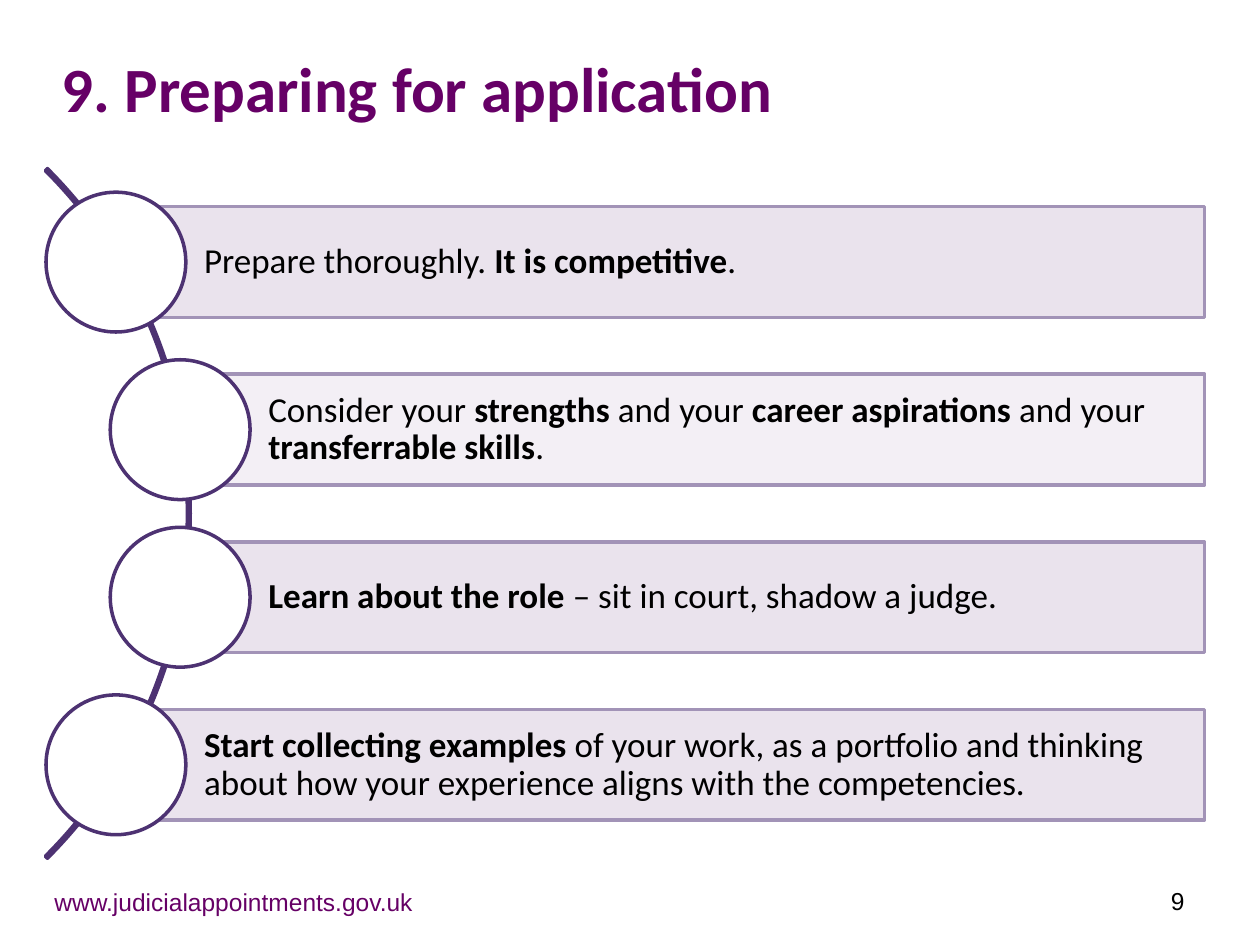
from dataclasses import dataclass

import pptx
import pptx.dml.color
import pptx.enum.shapes
import pptx.enum.text
import pptx.util

SHAPE = pptx.enum.shapes.MSO_SHAPE
ALIGN = pptx.enum.text.PP_ALIGN
MIDDLE = pptx.enum.text.MSO_ANCHOR.MIDDLE
Inches = pptx.util.Inches

COLORS = {
    "plum": "660066", "black": "000000", "white": "FFFFFF",
    "outline": "4D3272", "bar_line": "A293B7",
    "bar": "EAE3ED", "bar_pale": "F3EFF5",
}

# Step grid: four equal rows, two indents for the bars
ROW_TOP, ROW_PITCH, BAR_H = 1.64, 1.33, 0.88
COLUMNS = (0.92, 1.43)
BAR_RIGHT = 9.56
CIRCLE = 1.11
ARC = 7.74
ARC_CENTRE_X = -2.36


@dataclass
class Step:
    column: int
    runs: list[tuple[str, bool]]
    fill: str = "bar"


@dataclass
class Label:
    text: str
    box: tuple[float, float, float, float]
    align: ALIGN
    color: str


STEPS = [
    Step(0, [("Prepare thoroughly. ", False), ("It is competitive", True), (".", False)]),
    Step(1, [("Consider your ", False), ("strengths", True), (" and your ", False),
             ("career aspirations ", True), ("and your ", False),
             ("transferrable skills", True), (".", False)], "bar_pale"),
    Step(1, [("Learn about the role ", True), ("– sit in court, shadow a judge.", False)]),
    Step(0, [("Start collecting examples ", True),
             ("of your work, as a portfolio and thinking about how your experience "
              "aligns with the competencies.", False)]),
]

LABELS = [
    Label("www.judicialappointments.gov.uk", (0.27, 6.9, 3.17, 0.52), ALIGN.CENTER, "plum"),
    Label("9", (7.17, 6.95, 2.33, 0.4), ALIGN.RIGHT, "black"),
]


def rgb(name: str) -> pptx.dml.color.RGBColor:
    return pptx.dml.color.RGBColor.from_string(COLORS[name])


def set_all(target, values: dict) -> None:
    for name, value in values.items():
        setattr(target, name, value)


def add_run(p, text: str, size: float, font: str, color: str, bold: bool = False) -> None:
    r = p.add_run()
    r.text = text
    set_all(r.font, {"size": pptx.util.Pt(size), "name": font, "bold": bold})
    r.font.color.rgb = rgb(color)


def add_outlined(s, kind, box: tuple, line: str, fill: str | None = None):
    sp = s.shapes.add_shape(kind, *map(Inches, box))
    sp.shadow.inherit = False
    if fill:
        sp.fill.solid()
        sp.fill.fore_color.rgb = rgb(fill)
    else:
        sp.fill.background()
    sp.line.color.rgb = rgb(line)
    sp.line.width = pptx.util.Pt(2)
    return sp


def add_step(s, row: int, step: Step) -> None:
    left, top = COLUMNS[step.column], ROW_TOP + row * ROW_PITCH
    bar = add_outlined(s, SHAPE.RECTANGLE, (left, top, BAR_RIGHT - left, BAR_H),
                       "bar_line", step.fill)
    tf = bar.text_frame
    inset = Inches(0.06)
    set_all(tf, {"word_wrap": True, "vertical_anchor": MIDDLE, "margin_left": Inches(0.7),
                 "margin_right": inset, "margin_top": inset, "margin_bottom": inset})
    p = tf.paragraphs[0]
    set_all(p, {"alignment": ALIGN.LEFT, "line_spacing": 0.9})
    for text, bold in step.runs:
        add_run(p, text, 20, "Calibri", "black", bold)
    # Circle centred on the middle of the bar's left side
    add_outlined(s, SHAPE.OVAL, (left - CIRCLE / 2, top + (BAR_H - CIRCLE) / 2, CIRCLE, CIRCLE),
                 "outline", "white")


def add_label(s, label: Label) -> None:
    tf = s.shapes.add_textbox(*map(Inches, label.box)).text_frame
    set_all(tf, {"word_wrap": True, "vertical_anchor": MIDDLE})
    p = tf.paragraphs[0]
    p.alignment = label.align
    add_run(p, label.text, 14, "Arial", label.color)


def main() -> None:
    prs = pptx.Presentation()
    set_all(prs, {"slide_width": Inches(10), "slide_height": Inches(7.5)})
    s = prs.slides.add_slide(prs.slide_layouts[5])

    # Title
    title = s.shapes.title
    set_all(title, dict(zip(("left", "top", "width", "height"),
                            map(Inches, (0.39, 0.27, 9.26, 0.85)))))
    title.text_frame.vertical_anchor = MIDDLE
    p = title.text_frame.paragraphs[0]
    p.alignment = ALIGN.LEFT
    add_run(p, "9. Preparing for application", 36, "Calibri", "plum", True)

    # Arc from 315 to 45 degrees, centred on the rows
    centre_y = ROW_TOP + (BAR_H + (len(STEPS) - 1) * ROW_PITCH) / 2
    arc = add_outlined(s, SHAPE.BLOCK_ARC,
                       (ARC_CENTRE_X - ARC / 2, centre_y - ARC / 2, ARC, ARC), "outline")
    for i, value in enumerate((189, 27, 0.003)):
        arc.adjustments[i] = value

    # Steps
    for row, step in enumerate(STEPS):
        add_step(s, row, step)

    # Footer
    for label in LABELS:
        add_label(s, label)

    prs.save("out.pptx")


if __name__ == "__main__":
    main()
